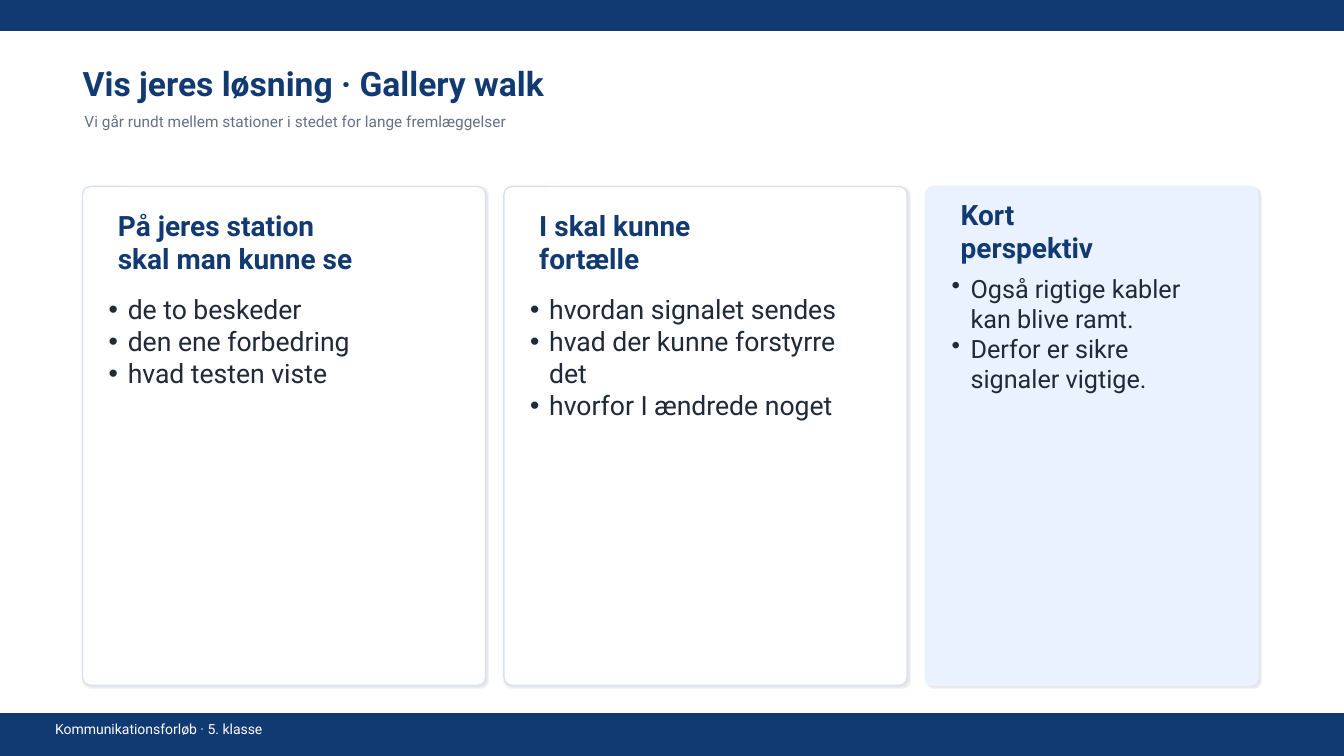
from collections import namedtuple

from pptx import Presentation
from pptx.dml.color import RGBColor
from pptx.enum.shapes import MSO_SHAPE as Shape
from pptx.enum.text import MSO_ANCHOR as Anchor, MSO_AUTO_SIZE as AutoSize, PP_ALIGN as Align
from pptx.oxml.ns import qn
from pptx.util import Cm, Pt
from lxml.etree import SubElement

TITLE = "Vis jeres løsning · Gallery walk"
SUBTITLE = "Vi går rundt mellem stationer i stedet for lange fremlæggelser"
FOOTER = "Kommunikationsforløb · 5. klasse"

Card = namedtuple("Card", "heading items width heading_size list_box list_size fill line")
CARDS = [
    Card("På jeres station skal man kunne se",
         ["de to beskeder", "den ene forbedring", "hvad testen viste"],
         10.16, (6.6, 1.27), (7.24, 8.13, 4.57), 19, "white", "border"),
    Card("I skal kunne fortælle",
         ["hvordan signalet sendes", "hvad der kunne forstyrre det", "hvorfor I ændrede noget"],
         10.16, (6.35, 1.27), (7.24, 8.13, 4.57), 19, "white", "border"),
    Card("Kort perspektiv",
         ["Også rigtige kabler kan blive ramt.", "Derfor er sikre signaler vigtige."],
         8.38, (5.08, 0.71), (6.73, 6.6, 3.81), 18, "tint", "tint"),
]

THEME = {
    "font": "Roboto",
    "colors": {"navy": "123A72", "white": "FFFFFF", "tint": "EAF2FF",
               "border": "D8E2F0", "ink": "1F2937", "muted": "667085"},
    "sizes": {"title": 24, "heading": 20, "subtitle": 11, "footer": 10},
}
SLIDE_WIDTH, SLIDE_HEIGHT = 33.87, 19.05
CARD_LEFT, CARD_TOP, CARD_HEIGHT, CARD_GAP = 2.08, 4.7, 12.57, 0.46
CORNER, HEADING_TOP, HEADING_INSET, LIST_INSET = 0.2, 5.46, 0.64, 0.51
LIST_MARGIN, BULLET_INDENT = 0.15, 0.48


def color(name):
    return RGBColor.from_string(THEME["colors"][name])


def place(box, left, top, width, height):
    box.left, box.top, box.width, box.height = map(Cm, (left, top, width, height))


def write(box, lines, size, ink, bold=False, anchor=Anchor.MIDDLE, bullets=False):
    frame = box.text_frame
    frame.word_wrap = True
    frame.auto_size = AutoSize.NONE
    frame.vertical_anchor = anchor
    frame.text = "\n".join(lines)
    for para in frame.paragraphs:
        para.alignment = Align.LEFT
        para.space_before = Pt(0)
        if bullets:
            props = para._p.get_or_add_pPr()
            props.set("marL", str(Cm(BULLET_INDENT)))
            props.set("indent", str(-Cm(BULLET_INDENT)))
            SubElement(props, qn("a:buChar"), char="•")
        para.font.name = THEME["font"]
        para.font.size = Pt(size)
        para.font.bold = bold
        para.font.color.rgb = color(ink)


def add_label(page, text, area, size, ink, bold=False):
    box = page.shapes.add_textbox(*map(Cm, area))
    write(box, [text], size, ink, bold)


def add_panel(page, kind, area, fill, line):
    panel = page.shapes.add_shape(kind, *map(Cm, area))
    panel.shadow.inherit = False
    panel.fill.solid()
    panel.fill.fore_color.rgb = color(fill)
    panel.line.color.rgb = color(line)
    panel.line.width = Pt(1)
    return panel


def add_shadow(panel):
    effects = panel._element.spPr.find(qn("a:effectLst"))
    shadow = SubElement(effects, qn("a:outerShdw"), blurRad=str(Pt(1)), dist=str(Pt(1.2)),
                        dir="2700000", algn="bl", rotWithShape="0")
    black = SubElement(shadow, qn("a:srgbClr"), val="000000")
    SubElement(black, qn("a:alpha"), val="10000")


def add_card(page, card, left, body):
    panel = add_panel(page, Shape.ROUNDED_RECTANGLE,
                      (left, CARD_TOP, card.width, CARD_HEIGHT), card.fill, card.line)
    panel.adjustments[0] = CORNER / card.width
    add_shadow(panel)
    add_label(page, card.heading, (left + HEADING_INSET, HEADING_TOP, *card.heading_size),
              THEME["sizes"]["heading"], "navy", True)
    box = body or page.shapes.add_textbox(0, 0, 0, 0)
    page.shapes._spTree.append(box._element)
    place(box, left + LIST_INSET, *card.list_box)
    frame = box.text_frame
    frame.margin_left = frame.margin_right = Cm(LIST_MARGIN)
    frame.margin_top = frame.margin_bottom = Cm(LIST_MARGIN)
    write(box, card.items, card.list_size, "ink", anchor=Anchor.TOP, bullets=True)


def main():
    """Build the gallery walk slide and save it."""
    deck = Presentation()
    deck.slide_width, deck.slide_height = Cm(SLIDE_WIDTH), Cm(SLIDE_HEIGHT)
    page = deck.slides.add_slide(deck.slide_layouts.get_by_name("Two Content"))
    sizes = THEME["sizes"]
    bodies = {holder.placeholder_format.idx: holder for holder in page.placeholders}

    for top, height in ((0, 0.76), (17.98, 1.07)):
        add_panel(page, Shape.RECTANGLE, (0, top, SLIDE_WIDTH, height), "navy", "navy")
    add_label(page, FOOTER, (1.14, 18.19, 20.32, 0.38), sizes["footer"], "white")
    place(page.shapes.title, 1.83, 1.57, 28.19, 1.07)
    write(page.shapes.title, [TITLE], sizes["title"], "navy", True)
    add_label(page, SUBTITLE, (1.88, 2.79, 27.43, 0.56), sizes["subtitle"], "muted")

    left = CARD_LEFT
    for number, card in enumerate(CARDS, start=1):
        add_card(page, card, left, bodies.get(number))
        left += card.width + CARD_GAP
    deck.save("out.pptx")


if __name__ == "__main__":
    main()
